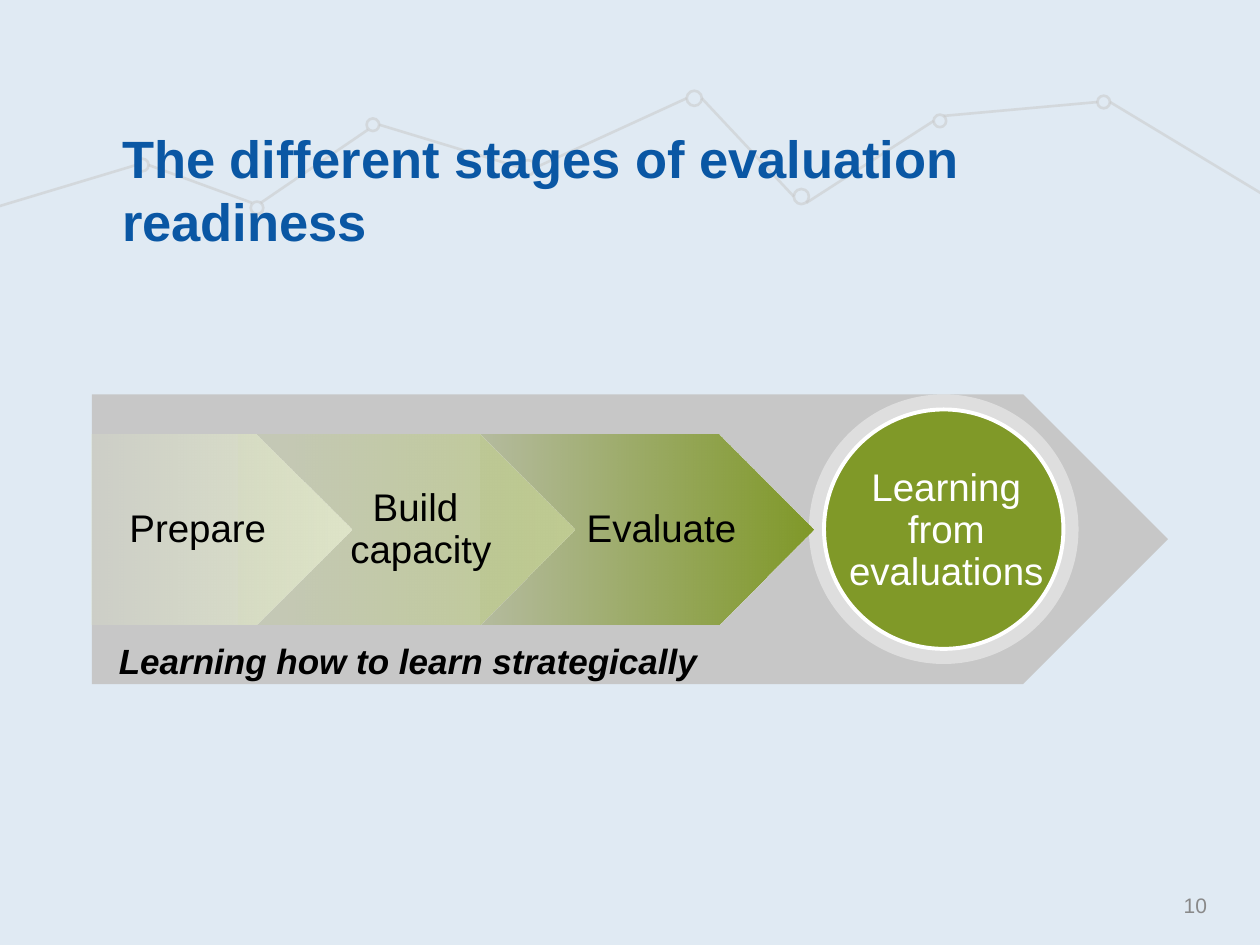
import pptx
import pptx.util
import pptx.dml.color
import pptx.enum.shapes
import pptx.enum.text
import pptx.oxml.ns
from lxml import etree

Inches, Pt = pptx.util.Inches, pptx.util.Pt
SHAPE = pptx.enum.shapes.MSO_SHAPE
ALIGN = pptx.enum.text.PP_ALIGN
ANCHOR = pptx.enum.text.MSO_ANCHOR
qn = pptx.oxml.ns.qn

COLORS = {
    "background": "E0EAF3", "title": "0A57A4", "gray": "C7C7C7",
    "green": "809928", "mid green": "C0CC93", "pale green": "DFE5C9",
    "white": "FFFFFF", "black": "000000", "number": "898989",
}

# Trend line behind the title: x1, y1, x2, y2
SEGMENTS = [
    (-0.35, 1.74, 1.08, 1.31), (2, 1.61, 1.18, 1.31), (2.92, 1.03, 2.07, 1.61),
    (4.13, 1.33, 3.01, 0.99), (5.45, 0.78, 4.25, 1.33), (6.3, 1.56, 5.57, 0.78),
    (7.41, 0.96, 6.4, 1.61), (8.71, 0.81, 7.49, 0.92), (10.35, 1.74, 8.81, 0.81),
]
# left, top, diameter
MARKERS = [
    (1.08, 1.26, 0.1), (1.99, 1.6, 0.1), (2.91, 0.94, 0.1), (4.13, 1.27, 0.12),
    (5.45, 0.72, 0.12), (6.3, 1.5, 0.12), (7.41, 0.91, 0.1), (8.71, 0.76, 0.1),
]
# Back to front: lines of text, colour, arrow left, arrow width, text left
STAGES = [
    (["Evaluate"], "green", 3.81, 2.65, 4.6),
    (["Build ", "capacity"], "mid green", 1.89, 2.67, 2.69),
    (["Prepare"], "pale green", 0.73, 2.06, 0.92),
]
STAGE_TOP, STAGE_HEIGHT = 3.45, 1.51
LABEL_WIDTH, LABEL_HEIGHT, LABEL_INSET = 1.3, 1.04, 0.03


def rgb(name):
    return pptx.dml.color.RGBColor.from_string(COLORS[name])


def set_alpha(parent, percent):
    """Make every colour below an XML element partly transparent."""
    for clr in parent.iter(qn("a:srgbClr")):
        etree.SubElement(clr, qn("a:alpha")).set("val", str(percent * 1000))


def add_shape(kind, box, fill=None, line=None, line_width=1.5):
    s = slide.shapes.add_shape(kind, *map(Inches, box))
    s.shadow.inherit = False
    if fill:
        s.fill.solid()
        s.fill.fore_color.rgb = rgb(fill)
    else:
        s.fill.background()
    if line:
        s.line.color.rgb = rgb(line)
        s.line.width = Pt(line_width)
    else:
        s.line.fill.background()
    return s


def add_text(lines, box, size, color, align=ALIGN.CENTER, anchor=ANCHOR.MIDDLE,
             insets=(0, 0), bold=False, italic=False, spacing=None):
    tf = slide.shapes.add_textbox(*map(Inches, box)).text_frame
    tf.word_wrap = True
    tf.vertical_anchor = anchor
    tf.margin_left = tf.margin_right = Inches(insets[0])
    tf.margin_top = tf.margin_bottom = Inches(insets[1])
    p = tf.paragraphs[0]
    p.alignment = align
    p.line_spacing = spacing
    for i, text in enumerate(lines):
        if i:
            p.add_line_break()
        r = p.add_run()
        r.text = text
        r.font.name, r.font.size = "Arial", Pt(size)
        r.font.bold, r.font.italic = bold, italic
        r.font.color.rgb = rgb(color)
    return p


def add_label(lines, box, color):
    add_text(lines, box, 22, color, insets=(LABEL_INSET, LABEL_INSET), spacing=0.9)


def add_trend_line():
    for segment in SEGMENTS:
        c = slide.shapes.add_connector(
            pptx.enum.shapes.MSO_CONNECTOR.STRAIGHT, *map(Inches, segment))
        c.line.color.rgb = rgb("gray")
        c.line.width = Pt(1.5)
        set_alpha(c.line._get_or_add_ln(), 50)
        etree.SubElement(c._element.spPr, qn("a:effectLst"))
    for left, top, size in MARKERS:
        s = add_shape(SHAPE.OVAL, (left, top, size, size), line="gray")
        set_alpha(s._element.spPr, 50)


def add_stage(lines, color, left, width, text_left):
    s = add_shape(SHAPE.PENTAGON, (left, STAGE_TOP, width, STAGE_HEIGHT))
    s.fill.gradient()
    s.fill.gradient_angle = 180
    for stop, position in zip(s.fill.gradient_stops, (0, 1)):
        stop.color.rgb = rgb(color)
        stop.position = position
    set_alpha(s._element.spPr.findall(".//" + qn("a:gs"))[1], 25)
    text_top = STAGE_TOP + (STAGE_HEIGHT - LABEL_HEIGHT) / 2
    add_label(lines, (text_left, text_top, LABEL_WIDTH, LABEL_HEIGHT), "black")


prs = pptx.Presentation()
prs.slide_width, prs.slide_height = Inches(10), Inches(7.5)
slide = prs.slides.add_slide(prs.slide_layouts[6])
slide.background.fill.solid()
slide.background.fill.fore_color.rgb = rgb("background")

add_trend_line()
add_text(["The different stages of evaluation readiness"], (0.97, 1.08, 8.6, 0.92),
         30, "title", align=ALIGN.LEFT, anchor=ANCHOR.BOTTOM, bold=True)

add_shape(SHAPE.PENTAGON, (0.73, 3.13, 8.54, 2.3), "gray")
halo = add_shape(SHAPE.OVAL, (6.42, 3.13, 2.14, 2.14), "white")
set_alpha(halo._element.spPr, 42)
add_shape(SHAPE.OVAL, (6.54, 3.25, 1.9, 1.9), "green", "white", 2.25)
for stage in STAGES:
    add_stage(*stage)
add_label(["Learning from evaluations"], (6.6, 3.76, 1.82, 0.91), "white")

add_text(["10"], (7.25, 6.98, 2.33, 0.4), 12, "number", align=ALIGN.RIGHT)
p = add_text(["Learning how to learn strategically"], (0.73, 4.96, 5.02, 0.5), 20,
             "black", anchor=ANCHOR.TOP, insets=(0.1, 0.05), bold=True, italic=True,
             spacing=1.2)
p.space_before = Pt(6)

prs.save("out.pptx")
